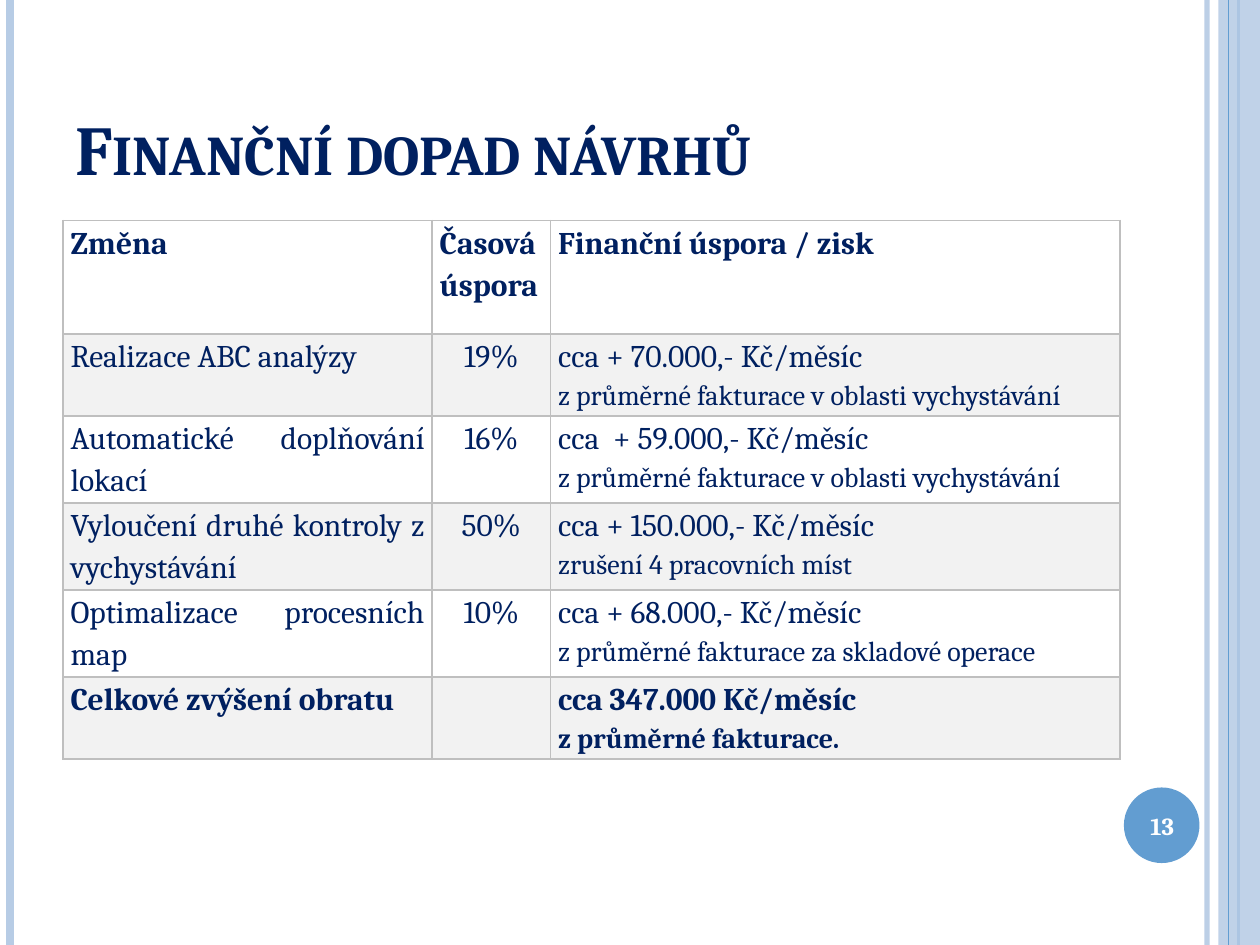
from lxml import etree
from pptx import Presentation
from pptx.dml.color import RGBColor
from pptx.enum.shapes import MSO_CONNECTOR as Connector, MSO_SHAPE as Shape
from pptx.enum.text import MSO_ANCHOR as Anchor, PP_ALIGN as Align
from pptx.oxml.ns import qn
from pptx.util import Inches, Pt

COLORS = {
    "navy": "002060",
    "blue": "629DD1",
    "pale": "B7CCE5",
    "border": "BFBFBF",
    "band": "F2F2F2",
    "white": "FFFFFF",
}
FONT = "Cambria"
WIDTH, HEIGHT = 10, 7.5

COLUMN_WIDTHS = [2.93, 0.94, 4.52]
ROW_HEIGHTS = [0.9, 0.6, 0.6, 0.6, 0.6, 0.35]
# Each row: change, time saved, financial effect and the basis of the estimate
HEADINGS = ("Změna", "Časová úspora", "Finanční úspora / zisk", "")
PROPOSALS = [
    ("Realizace ABC analýzy", "19%", "cca + 70.000,- Kč/měsíc",
     "z průměrné fakturace v oblasti vychystávání"),
    ("Automatické doplňování lokací", "16%", "cca  + 59.000,- Kč/měsíc",
     "z průměrné fakturace v oblasti vychystávání"),
    ("Vyloučení druhé kontroly z vychystávání", "50%", "cca + 150.000,- Kč/měsíc",
     "zrušení 4 pracovních míst"),
    ("Optimalizace procesních map", "10%", "cca + 68.000,- Kč/měsíc",
     "z průměrné fakturace za skladové operace"),
]
TOTAL = ("Celkové zvýšení obratu", "", "cca 347.000 Kč/měsíc", "z průměrné fakturace.")


def rgb(name):
    return RGBColor.from_string(COLORS[name])


def set_alpha(fill_parent, percent):
    """Make the solid fill inside the given XML element partly transparent."""
    color = next(fill_parent.iter(qn("a:srgbClr")))
    etree.SubElement(color, qn("a:alpha"), val=str(percent * 1000))


def write(paragraph, text, size=18, color="navy", bold=False, align=Align.LEFT,
          spacing=None, small_caps=False):
    paragraph.alignment = align
    if spacing:
        paragraph.line_spacing = spacing
    run = paragraph.add_run()
    run.text = text
    font = run.font
    font.name, font.size, font.bold = FONT, Pt(size), bold
    font.color.rgb = rgb(color)
    if small_caps:
        run._r.get_or_add_rPr().set("cap", "small")


class SlideBuilder:
    def __init__(self, slide):
        self.slide = slide
        self.shapes = slide.shapes

    def vertical_line(self, x, color, width, alpha=None):
        line = self.shapes.add_connector(
            Connector.STRAIGHT, Inches(x), 0, Inches(x), Inches(HEIGHT))
        line.line.color.rgb = rgb(color)
        line.line.width = Pt(width)
        properties = line._element.spPr
        if alpha:
            set_alpha(properties, alpha)
        etree.SubElement(properties, qn("a:effectLst"))

    def shape(self, kind, box, color, alpha=None):
        shape = self.shapes.add_shape(kind, *map(Inches, box))
        shape.shadow.inherit = False
        shape.fill.solid()
        shape.fill.fore_color.rgb = rgb(color)
        shape.line.fill.background()
        if alpha:
            set_alpha(shape._element.spPr, alpha)

    def text(self, box, text, anchor, **style):
        frame = self.shapes.add_textbox(*map(Inches, box)).text_frame
        frame.word_wrap = True
        frame.vertical_anchor = anchor
        write(frame.paragraphs[0], text, **style)

    def cell(self, cell, lines, fill, **style):
        """Fill one cell; the first line is 18 pt and the one below it 16 pt."""
        cell.fill.solid()
        cell.fill.fore_color.rgb = rgb(fill)
        cell.margin_left = cell.margin_right = Inches(0.06)
        cell.margin_top = cell.margin_bottom = 0
        frame = cell.text_frame
        for index, (line, size) in enumerate(zip(lines, (18, 16))):
            if line:
                paragraph = frame.add_paragraph() if index else frame.paragraphs[0]
                write(paragraph, line, size=size, spacing=1.15, **style)
        self.cell_borders(cell)

    def cell_borders(self, cell):
        properties = cell._tc.get_or_add_tcPr()
        for index, side in enumerate(("lnL", "lnR", "lnT", "lnB")):
            border = etree.Element(qn(f"a:{side}"), w=str(Pt(1)))
            solid = etree.SubElement(border, qn("a:solidFill"))
            etree.SubElement(solid, qn("a:srgbClr"), val=COLORS["border"])
            properties.insert(index, border)

    def table(self, left, top, rows):
        table = self.shapes.add_table(
            len(rows), len(COLUMN_WIDTHS), Inches(left), Inches(top),
            Inches(sum(COLUMN_WIDTHS)), Inches(sum(ROW_HEIGHTS))).table
        table.first_row = table.horz_banding = False
        for column, width in zip(table.columns, COLUMN_WIDTHS):
            column.width = Inches(width)
        for number, (change, time_saved, effect, basis) in enumerate(rows):
            table.rows[number].height = Inches(ROW_HEIGHTS[number])
            bold = number in (0, len(rows) - 1)
            fill = "band" if number % 2 else "white"
            for column, lines in enumerate([(change,), (time_saved,), (effect, basis)]):
                centred = column == 1 and not bold
                self.cell(table.cell(number, column), lines, fill, bold=bold,
                          align=Align.CENTER if centred else Align.JUSTIFY)


def main():
    deck = Presentation()
    deck.slide_width, deck.slide_height = Inches(WIDTH), Inches(HEIGHT)
    page = SlideBuilder(deck.slides.add_slide(deck.slide_layouts[6]))

    page.vertical_line(9.58, "pale", 3, alpha=93)
    page.vertical_line(0.08, "pale", 4.5)
    page.vertical_line(9.83, "blue", 1.5)
    page.shape(Shape.RECTANGLE, (9.67, 0, 0.33, HEIGHT), "pale", alpha=87)
    page.vertical_line(9.75, "blue", 0.75)
    page.shape(Shape.OVAL, (8.92, 6.25, 0.6, 0.6), "blue")

    page.text((0.5, 0.3, 8.17, 1.25), "Finanční dopad návrhů", Anchor.BOTTOM,
              size=40, bold=True, small_caps=True)
    page.text((8.89, 6.27, 0.67, 0.57), "13", Anchor.MIDDLE,
              size=14, color="white", bold=True, align=Align.CENTER)
    page.table(0.5, 1.75, [HEADINGS, *PROPOSALS, TOTAL])

    deck.save("out.pptx")


if __name__ == "__main__":
    main()
